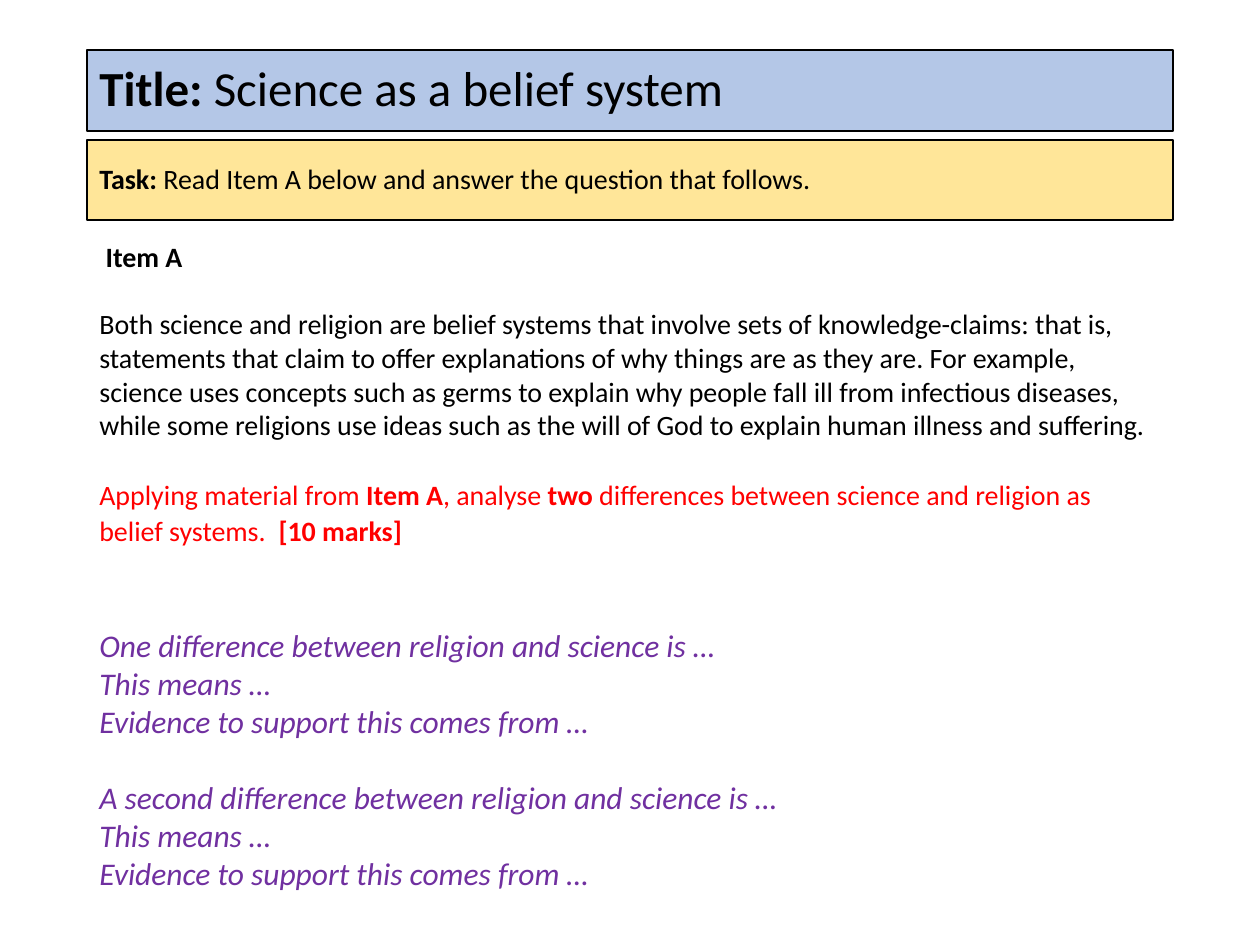
import pptx
import pptx.dml.color
import pptx.enum.shapes
import pptx.enum.text
import pptx.util

PX = 914400 / 126
LEFT, WIDTH = 87, 1086


def px(n):
    return pptx.util.Emu(round(n * PX))


def rgb(value):
    return pptx.dml.color.RGBColor.from_string(value)


class Deck:
    font = "Calibri"
    black = "000000"
    red = "FF0000"
    purple = "7030A0"
    blue = "B4C7E7"
    yellow = "FFE699"

    def __init__(self):
        self.prs = pptx.Presentation()
        self.prs.slide_width = px(1260)
        self.prs.slide_height = px(945)
        self.slide = self.prs.slides.add_slide(self.prs.slide_layouts[6])

    def paragraph(self, tf, text, size, color=black, before=0, spacing=1.0, italic=None):
        p = tf.paragraphs[0] if not tf.text else tf.add_paragraph()
        p.alignment = pptx.enum.text.PP_ALIGN.LEFT
        p.line_spacing = spacing
        p.space_before = pptx.util.Pt(before)
        p.font.name = self.font
        p.font.size = pptx.util.Pt(size)
        p.font.color.rgb = rgb(color)
        p.font.italic = italic
        for i, part in enumerate(text.split("*")):
            if part:
                r = p.add_run()
                r.text = part
                r.font.bold = i % 2 == 1
        return p

    def banner(self, top, height, fill, text, size):
        sp = self.slide.shapes.add_shape(
            pptx.enum.shapes.MSO_SHAPE.RECTANGLE, px(LEFT), px(top), px(WIDTH), px(height))
        sp.shadow.inherit = False
        sp.fill.solid()
        sp.fill.fore_color.rgb = rgb(fill)
        sp.line.color.rgb = rgb(self.black)
        sp.line.width = pptx.util.Pt(0.75)
        sp.text_frame.word_wrap = True
        sp.text_frame.vertical_anchor = pptx.enum.text.MSO_ANCHOR.MIDDLE
        self.paragraph(sp.text_frame, text, size, spacing=0.9)

    def text_box(self, top, height):
        sp = self.slide.shapes.add_textbox(px(LEFT), px(top), px(WIDTH), px(height))
        tf = sp.text_frame
        tf.word_wrap = True
        return tf


def main():
    deck = Deck()
    deck.banner(50, 81, deck.blue, "*Title: *Science as a belief system", 28)
    deck.banner(140, 80, deck.yellow,
                "*Task: *Read Item A below and answer the question that follows.", 16)

    item = deck.text_box(233, 357)
    deck.paragraph(item, " *Item A*", 16)
    deck.paragraph(
        item,
        "Both science and religion are belief systems that involve sets of knowledge-claims: "
        "that is, statements that claim to offer explanations of why things are as they are. "
        "For example, science uses concepts such as germs to explain why people fall ill from "
        "infectious diseases, while some religions use ideas such as the will of God to explain "
        "human illness and suffering.",
        16, before=19.5)
    question = deck.paragraph(
        item,
        "Applying material from *Item A*, analyse *two *differences between science and "
        "religion as belief systems.  *[10 marks]*",
        16, deck.red, before=19.5, spacing=1.07)
    question.space_after = pptx.util.Pt(8)

    frame = deck.text_box(620, 280)
    for opening, gap in (("One", 0), ("A second", 22)):
        lines = (f"{opening} difference between religion and science is …",
                 "This means …",
                 "Evidence to support this comes from …")
        for i, line in enumerate(lines):
            deck.paragraph(frame, line, 18, deck.purple,
                           before=gap if i == 0 else 0, italic=True)

    deck.prs.save("out.pptx")


if __name__ == "__main__":
    main()
